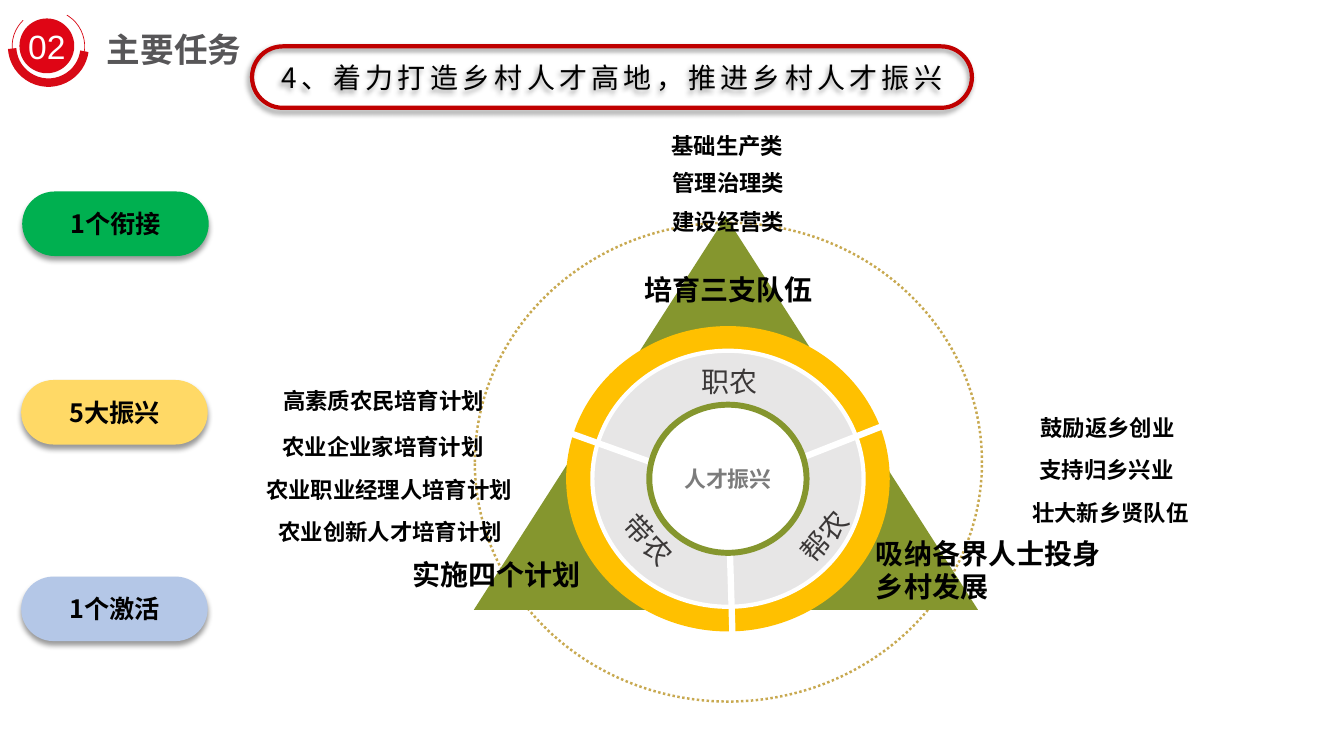
from dataclasses import dataclass
from typing import Optional

from lxml.etree import SubElement
from pptx import Presentation
from pptx.dml.color import RGBColor
from pptx.enum.dml import MSO_LINE
from pptx.enum.shapes import MSO_CONNECTOR, MSO_SHAPE as Geo
from pptx.enum.text import MSO_ANCHOR as Anchor, MSO_AUTO_SIZE as AutoSize, PP_ALIGN as Align
from pptx.oxml.ns import qn
from pptx.util import Inches, Pt


@dataclass(frozen=True)
class Theme:
    cjk: str = "Noto Sans CJK SC"
    latin: str = "Arial"
    black: str = "000000"
    white: str = "FFFFFF"
    title: str = "575658"
    badge: str = "DF0515"
    badge_line: str = "D80A16"
    frame: str = "C00000"
    olive: str = "85962E"
    amber: str = "FFC000"
    pale: str = "E7E6E6"
    orbit: str = "C8A950"
    hub_text: str = "7C7C7C"
    role_text: str = "3B3838"
    green: str = "00B050"
    yellow: str = "FFD966"
    blue: str = "B4C7E7"
    title_size: float = 24
    heading_size: float = 20
    pill_size: float = 18
    item_size: float = 16
    hub_size: float = 15.6


T = Theme()


@dataclass(frozen=True)
class Box:
    left: float
    top: float
    width: float
    height: float

    def emu(self) -> list:
        return [Inches(v) for v in (self.left, self.top, self.width, self.height)]


@dataclass(frozen=True)
class Style:
    size: float
    color: str = T.black
    bold: bool = True
    font: str = T.cjk
    spacing: int = 0


@dataclass(frozen=True)
class Figure:
    geo: Geo
    box: Box
    fill: Optional[str] = None
    line: Optional[str] = None
    weight: float = 0
    adjust: tuple = ()
    rotation: float = 0
    dotted: bool = False
    shadow: Optional[int] = None  # direction in degrees


@dataclass(frozen=True)
class Label:
    text: str
    box: Box
    style: Style
    align: Align = Align.LEFT
    wrap: bool = True
    rotation: float = 0


HEADING = Style(T.heading_size)
ITEM = Style(T.item_size)
ROLE = Style(T.heading_size, T.role_text, False)
CENTER_X, CENTER_Y = 7.22, 4.75


def write(tf, text: str, style: Style, align: Align) -> None:
    p = tf.paragraphs[0]
    p.alignment = align
    r = p.add_run()
    r.text = text
    r.font.size = Pt(style.size)
    r.font.bold = style.bold
    r.font.name = style.font
    r.font.color.rgb = RGBColor.from_string(style.color)
    rpr = r.font._element
    SubElement(rpr, qn("a:ea")).set("typeface", style.font)
    if style.spacing:
        rpr.set("spc", str(style.spacing))


def set_insets(tf, x: float, y: float) -> None:
    tf.margin_left = tf.margin_right = Inches(x)
    tf.margin_top = tf.margin_bottom = Inches(y)


def add_shadow(sp, direction: int) -> None:
    effects = sp._element.spPr.find(qn("a:effectLst"))
    outer = SubElement(effects, qn("a:outerShdw"), blurRad=str(Pt(4)), dist=str(Pt(3)),
                       dir=str(direction * 60000), algn="t", rotWithShape="0")
    color = SubElement(outer, qn("a:srgbClr"), val=T.black)
    SubElement(color, qn("a:alpha"), val="40000")


def add_figure(s, fig: Figure, text: str = "", style: Style = HEADING):
    sp = s.shapes.add_shape(fig.geo, *fig.box.emu())
    sp.shadow.inherit = False
    for i, value in enumerate(fig.adjust):
        sp.adjustments[i] = value
    sp.rotation = fig.rotation
    if fig.fill:
        sp.fill.solid()
        sp.fill.fore_color.rgb = RGBColor.from_string(fig.fill)
    else:
        sp.fill.background()
    if fig.line:
        sp.line.color.rgb = RGBColor.from_string(fig.line)
        sp.line.width = Pt(fig.weight)
        if fig.dotted:
            sp.line.dash_style = MSO_LINE.ROUND_DOT
    else:
        sp.line.fill.background()
    if fig.shadow is not None:
        add_shadow(sp, fig.shadow)
    if text:
        sp.text_frame.vertical_anchor = Anchor.MIDDLE
        write(sp.text_frame, text, style, Align.CENTER)
    return sp


def add_label(s, label: Label) -> None:
    sp = s.shapes.add_textbox(*label.box.emu())
    sp.rotation = label.rotation
    tf = sp.text_frame
    tf.word_wrap = label.wrap
    tf.auto_size = AutoSize.SHAPE_TO_FIT_TEXT
    write(tf, label.text, label.style, label.align)


def ring(width: float, height: float, **look) -> Figure:
    """Ellipse around the centre of the diagram."""
    box = Box(CENTER_X - width / 2, CENTER_Y - height / 2, width, height)
    return Figure(Geo.OVAL, box, **look)


def add_spoke(s, start: tuple, end: tuple) -> None:
    c = s.shapes.add_connector(MSO_CONNECTOR.STRAIGHT, *[Inches(v) for v in start + end])
    c.line.color.rgb = RGBColor.from_string(T.white)
    c.line.width = Pt(4.5)
    SubElement(c._element.spPr, qn("a:effectLst"))


def add_header(s) -> None:
    title = s.shapes.title
    title.left, title.top, title.width, title.height = Box(0.99, 0.26, 4.44, 0.47).emu()
    tf = title.text_frame
    tf.word_wrap = True
    tf.auto_size = AutoSize.NONE
    tf.vertical_anchor = Anchor.TOP
    set_insets(tf, 0.07, 0.03)
    write(tf, "主要任务", Style(T.title_size, T.title), Align.LEFT)

    badge = Figure(Geo.OVAL, Box(0.2, 0.19, 0.53, 0.53), T.badge, T.badge_line, 1)
    sp = add_figure(s, badge, "02", Style(T.title_size, T.white, False, T.latin))
    sp.text_frame.word_wrap = False
    for adjust, weight in (((34.06, 205.29), 0.5), ((74.49, 175.71), 6)):
        add_figure(s, Figure(Geo.ARC, Box(0.12, 0.1, 0.72, 0.72), line=T.badge_line,
                             weight=weight, adjust=adjust, rotation=243.7))


def add_pills(s) -> None:
    for text, left, top, fill in (("1个衔接", 0.22, 1.9, T.green),
                                  ("5大振兴", 0.21, 3.77, T.yellow),
                                  ("1个激活", 0.21, 5.72, T.blue)):
        pill = Figure(Geo.ROUNDED_RECTANGLE, Box(left, top, 1.85, 0.64), fill,
                      adjust=(0.5,), shadow=90)
        add_figure(s, pill, text, Style(T.pill_size))
    frame = Figure(Geo.ROUNDED_RECTANGLE, Box(2.5, 0.46, 7.14, 0.61), line=T.frame,
                   weight=3, adjust=(0.5,), shadow=135)
    sp = add_figure(s, frame, "4、着力打造乡村人才高地，推进乡村人才振兴",
                    Style(T.heading_size, bold=False, spacing=300))
    set_insets(sp.text_frame, 0.13, 0.07)


def add_diagram(s) -> None:
    for fig in (Figure(Geo.OVAL, Box(4.71, 2.21, 5.03, 4.75), line=T.orbit, weight=1.75, dotted=True),
                Figure(Geo.ISOSCELES_TRIANGLE, Box(4.7, 2.15, 5, 3.9), T.olive),
                ring(3.21, 3.03, fill=T.amber),
                ring(2.69, 2.54, fill=T.pale, line=T.white, weight=3)):
        add_figure(s, fig)
    for start, end in (((7.14, 4.83), (4.88, 4.02)),
                       ((7.22, 4.83), (9.56, 3.91)),
                       ((7.22, 4.83), (7.28, 6.8))):
        add_spoke(s, start, end)
    add_figure(s, ring(1.56, 1.47, fill=T.white, line=T.olive, weight=4.25),
               "人才振兴", Style(T.hub_size, T.hub_text))
    for text, left, top, angle in (("职农", 6.86, 3.57, 0), ("带农", 6.05, 5.14, 46.9),
                                   ("帮农", 7.8, 5.1, 310.5)):
        add_label(s, Label(text, Box(left, top, 0.76, 0.44), ROLE, wrap=False, rotation=angle))
    for text, box in (("培育三支队伍", Box(6.29, 2.65, 1.97, 0.44)),
                      ("实施四个计划", Box(3.99, 5.48, 2.12, 0.44)),
                      ("吸纳各界人士投身乡村发展", Box(8.59, 5.27, 2.54, 0.77))):
        add_label(s, Label(text, box, HEADING))


def add_items(s) -> None:
    for text, left, top, width in (("基础生产类", 5.97, 1.26, 2.49),
                                   ("管理治理类", 5.98, 1.63, 2.49),
                                   ("建设经营类", 5.98, 2.02, 2.49),
                                   ("高素质农民培育计划", 2.56, 3.79, 2.49),
                                   ("农业企业家培育计划", 2.29, 4.25, 3.02),
                                   ("农业职业经理人培育计划", 2.35, 4.67, 3.02),
                                   ("农业创新人才培育计划", 2.36, 5.09, 3.02),
                                   ("鼓励返乡创业", 9.74, 4.06, 2.49),
                                   ("支持归乡兴业", 9.36, 4.48, 3.23),
                                   ("壮大新乡贤队伍", 9.4, 4.9, 3.23)):
        add_label(s, Label(text, Box(left, top, width, 0.37), ITEM, Align.CENTER))


def main() -> None:
    prs = Presentation()
    prs.slide_width, prs.slide_height = Inches(13.33), Inches(7.5)
    s = prs.slides.add_slide(prs.slide_layouts[5])
    for add_part in (add_header, add_pills, add_diagram, add_items):
        add_part(s)
    prs.save("out.pptx")


if __name__ == "__main__":
    main()
